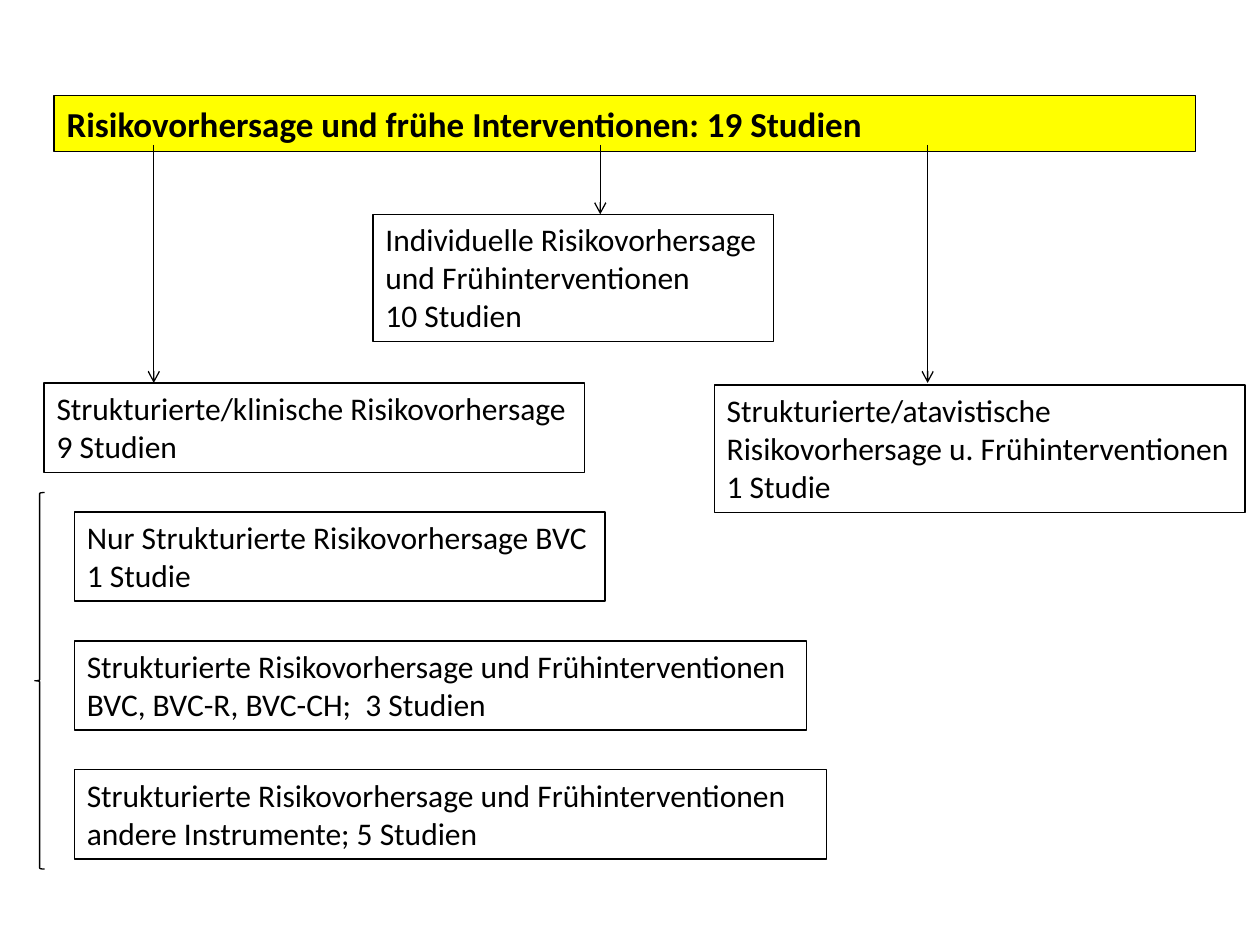
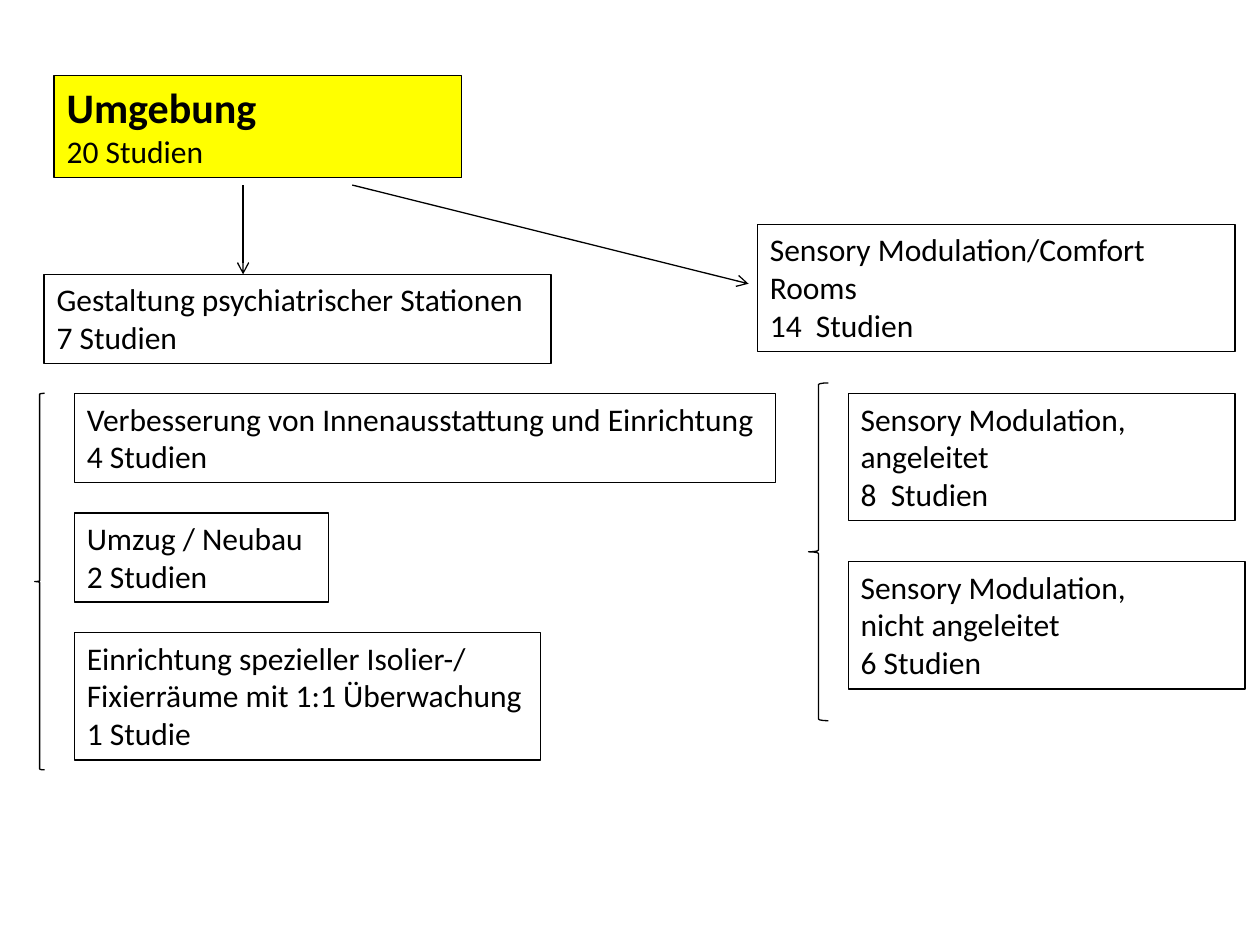
from dataclasses import dataclass

from lxml import etree
from pptx import Presentation
from pptx.dml.color import RGBColor
from pptx.enum.shapes import MSO_CONNECTOR, MSO_SHAPE
from pptx.enum.text import MSO_ANCHOR, MSO_AUTO_SIZE, PP_ALIGN
from pptx.oxml.ns import qn
from pptx.util import Cm, Pt

RECT = MSO_SHAPE.RECTANGLE
LEFT_BRACE = MSO_SHAPE.LEFT_BRACE
STRAIGHT = MSO_CONNECTOR.STRAIGHT
TOP = MSO_ANCHOR.TOP
LEFT = PP_ALIGN.LEFT
FIXED_SIZE = MSO_AUTO_SIZE.NONE
TITLE_ONLY = 5


@dataclass(frozen=True)
class Theme:
    font: str = "Calibri"
    ink: RGBColor = RGBColor(0, 0, 0)
    highlight: RGBColor = RGBColor(255, 255, 0)
    line: float = 0.75
    body: int = 18
    title: int = 20
    big_title: int = 24


THEME = Theme()
GROUP_X = 0.89      # left edge of the study groups
SUBGROUP_X = 1.5    # left edge of the indented subgroups
SENSORY_X = 17.1
BRACE_X = 0.7


def add_text(tf, text, first=False, size=THEME.body, bold=False):
    p = tf.paragraphs[0] if first else tf.add_paragraph()
    p.alignment = LEFT
    r = p.add_run()
    r.text = text
    r.font.name = THEME.font
    r.font.size = Pt(size)
    r.font.bold = bold
    r.font.color.rgb = THEME.ink


def outline(s):
    s.line.color.rgb = THEME.ink
    s.line.width = Pt(THEME.line)


def prepare_frame(s):
    tf = s.text_frame
    tf.word_wrap = True
    tf.auto_size = FIXED_SIZE
    tf.vertical_anchor = TOP
    return tf


def add_title(s, y, w, h, text, size, subtitle=None):
    sp = s.shapes.title
    sp.left, sp.top, sp.width, sp.height = Cm(1.09), Cm(y), Cm(w), Cm(h)
    sp.fill.solid()
    sp.fill.fore_color.rgb = THEME.highlight
    outline(sp)
    tf = prepare_frame(sp)
    add_text(tf, text, first=True, size=size, bold=True)
    if subtitle:
        add_text(tf, subtitle)


def add_shape(s, kind, x, y, w, h):
    sp = s.shapes.add_shape(kind, Cm(x), Cm(y), Cm(w), Cm(h))
    sp.shadow.inherit = False
    sp.fill.background()
    outline(sp)
    return sp


def add_box(s, x, y, w, *lines):
    """Outlined box whose height follows from its number of lines."""
    sp = add_shape(s, RECT, x, y, w, 0.26 + 0.77 * len(lines))
    tf = prepare_frame(sp)
    for i, text in enumerate(lines):
        add_text(tf, text, first=i == 0)


def add_stack(s, x, y, step, boxes):
    """Boxes, each given as width and lines, one below the other."""
    for i, (w, *lines) in enumerate(boxes):
        add_box(s, x, y + i * step, w, *lines)


def add_brace(s, x, y, w, h):
    add_shape(s, LEFT_BRACE, x, y, w, h)


def add_arrow(s, x1, y1, x2, y2):
    c = s.shapes.add_connector(STRAIGHT, Cm(x1), Cm(y1), Cm(x2), Cm(y2))
    outline(c)
    etree.SubElement(c.line._get_or_add_ln(), qn("a:tailEnd"), type="arrow")
    etree.SubElement(c._element.spPr, qn("a:effectLst"))


def build_prediction(s):
    add_title(s, 1.93, 23.01, 1.12,
              "Risikovorhersage und frühe Interventionen: 19 Studien", THEME.title)
    add_box(s, 7.52, 4.32, 8.08, "Individuelle Risikovorhersage",
            "und Frühinterventionen", "10 Studien")
    add_box(s, GROUP_X, 7.72, 10.9, "Strukturierte/klinische Risikovorhersage", "9 Studien")
    add_box(s, 14.4, 7.76, 10.7, "Strukturierte/atavistische",
            "Risikovorhersage u. Frühinterventionen", "1 Studie")
    for x, y in ((12.1, 4.32), (3.1, 7.72), (18.7, 7.72)):
        add_arrow(s, x, 2.92, x, y)

    both = "Strukturierte Risikovorhersage und Frühinterventionen"
    add_brace(s, BRACE_X, 9.93, 0.2, 7.59)
    add_stack(s, SUBGROUP_X, 10.32, 2.6, (
        (10.7, "Nur Strukturierte Risikovorhersage BVC", "1 Studie"),
        (14.76, both, "BVC, BVC-R, BVC-CH;  3 Studien"),
        (15.16, both, "andere Instrumente; 5 Studien"),
    ))


def build_environment(s):
    add_title(s, 1.52, 8.22, 2.06, "Umgebung", THEME.big_title, "20 Studien")
    add_box(s, GROUP_X, 5.53, 10.22, "Gestaltung psychiatrischer Stationen", "7 Studien")
    add_box(s, 15.27, 4.52, 9.63, "Sensory Modulation/Comfort", "Rooms", "14  Studien")
    add_arrow(s, 4.9, 3.73, 4.9, 5.53)
    add_arrow(s, 7.1, 3.73, 15.09, 5.72)

    add_brace(s, BRACE_X, 7.93, 0.2, 7.59)
    add_stack(s, SUBGROUP_X, 7.93, 2.41, (
        (14.14, "Verbesserung von Innenausstattung und Einrichtung", "4 Studien"),
        (5.13, "Umzug / Neubau", "2 Studien"),
        (9.4, "Einrichtung spezieller Isolier-/",
         "Fixierräume mit 1:1 Überwachung", "1 Studie"),
    ))
    add_brace(s, 16.3, 7.72, 0.4, 6.81)
    add_stack(s, SENSORY_X, 7.93, 3.39, (
        (7.8, "Sensory Modulation,", "angeleitet", "8  Studien"),
        (8.0, "Sensory Modulation,", "nicht angeleitet", "6 Studien"),
    ))


def main():
    prs = Presentation()
    prs.slide_width, prs.slide_height = Cm(25.4), Cm(19.05)
    for build in (build_prediction, build_environment):
        build(prs.slides.add_slide(prs.slide_layouts[TITLE_ONLY]))
    prs.save("out.pptx")


if __name__ == "__main__":
    main()
